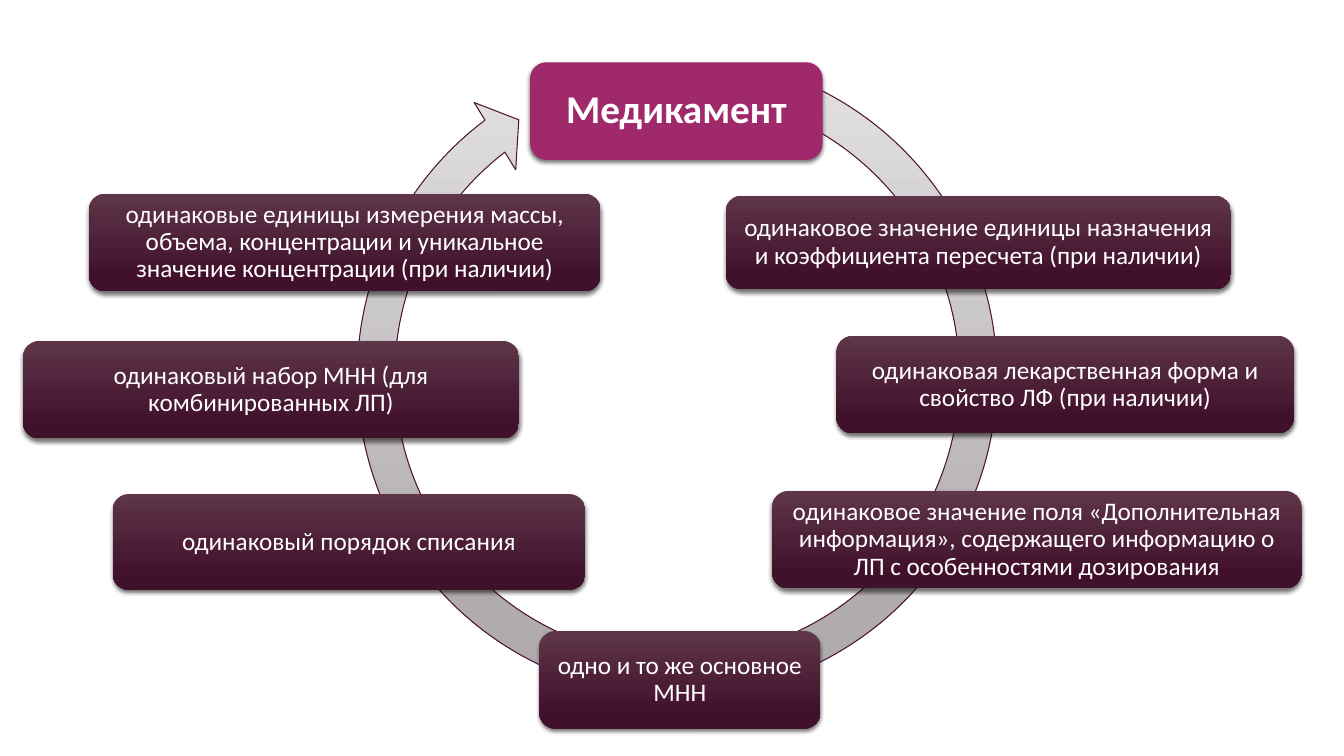
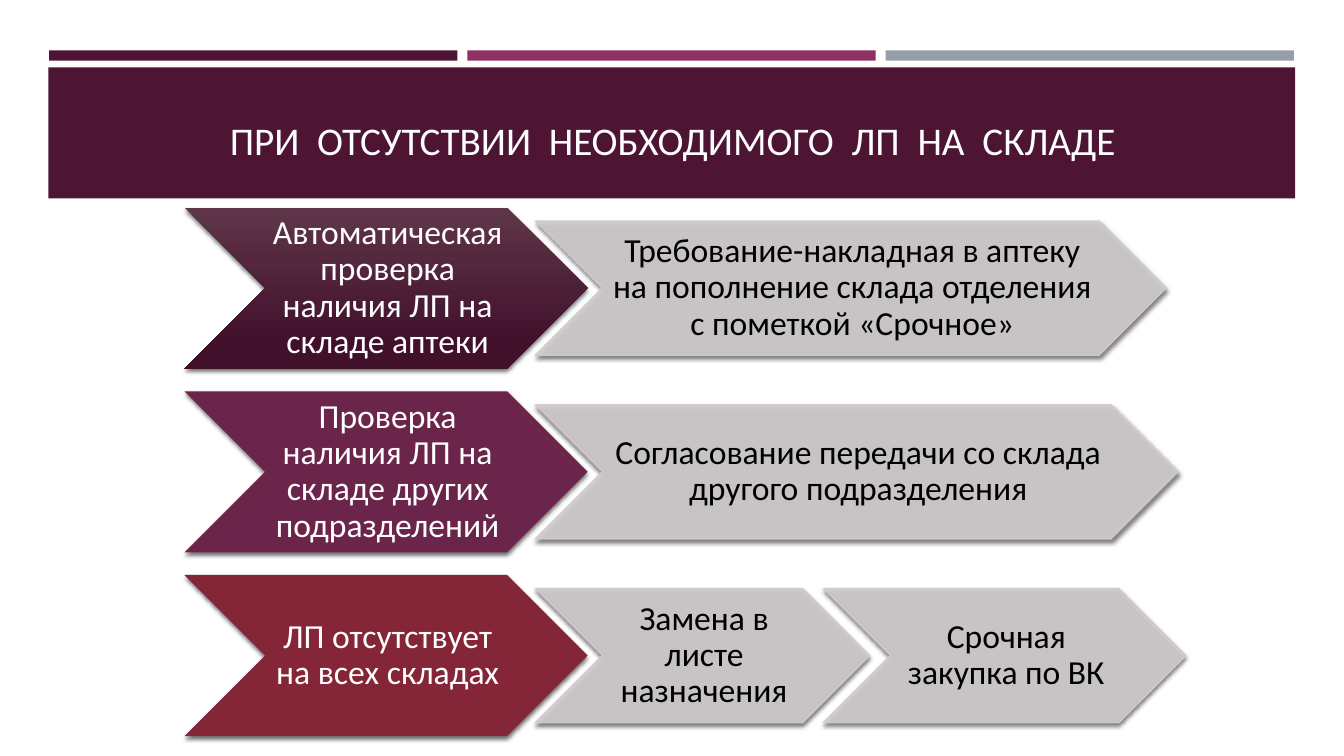
from lxml import etree
from pptx import Presentation
from pptx.dml.color import RGBColor
from pptx.enum import shapes, text
from pptx.oxml import ns
from pptx.util import Cm, Pt

FONT = "Calibri"
PLUM, ROSE, STEEL = "4D1434", "903163", "969FA7"
DARK = ("5F3649", "41112C")
RING = ("E5E3E4", "B0ABAD")
GREY, WHITE, BLACK = "D0CCCE", "FFFFFF", "000000"
KIND = shapes.MSO_SHAPE

# Node: left, top, width, height (cm), text
NODES = [
    (18.29, 4.93, 12.73, 2.36, "одинаковое значение единицы назначения и коэффициента пересчета (при наличии)"),
    (21.08, 8.46, 11.53, 2.46, "одинаковая лекарственная форма и свойство ЛФ (при наличии)"),
    (19.46, 12.37, 13.34, 2.46, "одинаковое значение поля «Дополнительная информация», "
                                "содержащего информацию о ЛП с особенностями дозирования"),
    (2.84, 12.45, 11.91, 2.41, "одинаковый порядок списания"),
    (13.59, 15.9, 7.09, 2.46, "одно и то же основное МНН"),
    (0.58, 8.59, 12.5, 2.46, "одинаковый набор МНН (для комбинированных ЛП)"),
    (2.24, 4.88, 12.9, 2.46, "одинаковые единицы измерения массы, объема, концентрации "
                             "и уникальное значение концентрации (при наличии)"),
]

# Row: fill and text of the check, then width (cm) and text of each action
ROWS = [
    (DARK, "Автоматическая проверка наличия ЛП на складе аптеки",
     [(15.9, "Требование-накладная в аптеку на пополнение склада отделения с пометкой «Срочное»")]),
    ("6C254A", "Проверка наличия ЛП на складе других подразделений",
     [(16.2, "Согласование передачи со склада другого подразделения")]),
    ("852638", "ЛП отсутствует на всех складах",
     [(8.43, "Замена в листе назначения"), (9.14, "Срочная закупка по ВК")]),
]


def rgb(code):
    return RGBColor.from_string(code)


def place(item, x, y, w, h):
    item.left, item.top, item.width, item.height = Cm(x), Cm(y), Cm(w), Cm(h)


def paint(shape, fill):
    """Fill with one colour, or from top to bottom with a pair."""
    if isinstance(fill, str):
        shape.fill.solid()
        shape.fill.fore_color.rgb = rgb(fill)
        return
    shape.fill.gradient()
    shape.fill.gradient_angle = 270
    for stop, code, spot in zip(shape.fill.gradient_stops, fill, (0, 0.84)):
        stop.color.rgb = rgb(code)
        stop.position = spot


def draw(slide, kind, box, fill, line=None, width=1):
    shape = slide.shapes.add_shape(kind, *map(Cm, box))
    shape.shadow.inherit = False
    paint(shape, fill)
    if line:
        shape.line.color.rgb = rgb(line)
        shape.line.width = Pt(width)
    else:
        shape.line.fill.background()
    return shape


def alpha(color, share):
    etree.SubElement(color, ns.qn("a:alpha"), val=str(share * 1000))


def shade(shape):
    """Soft shadow just below the shape."""
    effects = shape._element.spPr.find(ns.qn("a:effectLst"))
    outer = etree.SubElement(effects, ns.qn("a:outerShdw"), blurRad=str(Pt(3)),
                             dist=str(Pt(2)), dir="5400000", rotWithShape="0")
    alpha(etree.SubElement(outer, ns.qn("a:srgbClr"), val=BLACK), 55)


def write(shape, words, size, color=WHITE, bold=False, pads=None,
          anchor=text.MSO_ANCHOR.MIDDLE, spacing=0.9):
    frame = shape.text_frame
    frame.word_wrap = True
    frame.vertical_anchor = anchor
    if pads:
        (frame.margin_left, frame.margin_top,
         frame.margin_right, frame.margin_bottom) = map(Cm, pads)
    frame.text = words
    para = frame.paragraphs[0]
    para.alignment = text.PP_ALIGN.CENTER
    para.line_spacing = spacing
    para.font.name, para.font.size, para.font.bold = FONT, Pt(size), bold
    para.font.color.rgb = rgb(color)


def node(slide, box, words, fill=DARK, size=18, bold=False, pad=0.18):
    shape = draw(slide, KIND.ROUNDED_RECTANGLE, box, fill)
    shade(shape)
    write(shape, words, size, bold=bold, pads=[pad] * 4)


def arrow(slide, box, words, fill, color=WHITE, line=None):
    shape = draw(slide, KIND.CHEVRON, box, fill, line)
    shade(shape)
    write(shape, words, 24, color, pads=(0.08, 0.05, 0, 0.05))
    return shape


def action(slide, box, words):
    shape = arrow(slide, box, words, GREY, BLACK, GREY)
    for code in shape._element.spPr.iter(ns.qn("a:srgbClr")):
        if code.get("val") == GREY:
            alpha(code, 90)


def header(slide, words):
    for i, code in enumerate((PLUM, ROSE, STEEL)):
        draw(slide, KIND.RECTANGLE, (1.24 + i * 10.54, 1.27, 10.29, 0.26), code)
    draw(slide, KIND.RECTANGLE, (1.22, 1.7, 31.42, 3.3), PLUM)
    title = slide.shapes.title
    slide.shapes._spTree.append(title._element)  # bring in front of the band
    place(title, 1.63, 1.96, 30.63, 2.29)
    write(title, words, 28, anchor=text.MSO_ANCHOR.BOTTOM, spacing=1)


def cycle(slide):
    ring = draw(slide, KIND.CIRCULAR_ARROW, (8.48, 0.89, 17.17, 17.17), RING, PLUM, 0.75)
    for i, value in enumerate((0.055, 3.307, 139.663, 172.712, 0.058)):
        ring.adjustments[i] = value
    node(slide, (13.36, 1.57, 7.37, 2.46), "Медикамент", "9F296B", 28, True, 0.3)
    for *box, words in NODES:
        node(slide, box, words)


def steps(slide):
    for i, (fill, check, acts) in enumerate(ROWS):
        top = 5.23 + i * 4.63
        arrow(slide, (4.65, top, 10.16, 4.06), check, fill)
        left = 13.49
        for width, words in acts:
            action(slide, (left, top + 0.34, width, 3.38), words)
            left += width - 1.17


def main():
    deck = Presentation()
    deck.slide_width, deck.slide_height = Cm(33.87), Cm(19.05)
    # Slide 1: what defines a medicine
    cycle(deck.slides.add_slide(deck.slide_layouts[6]))
    # Slide 2: what to do when stock is missing
    slide = deck.slides.add_slide(deck.slide_layouts[5])
    header(slide, "ПРИ  ОТСУТСТВИИ  НЕОБХОДИМОГО  ЛП  НА  СКЛАДЕ")
    steps(slide)
    deck.save("out.pptx")


if __name__ == "__main__":
    main()
